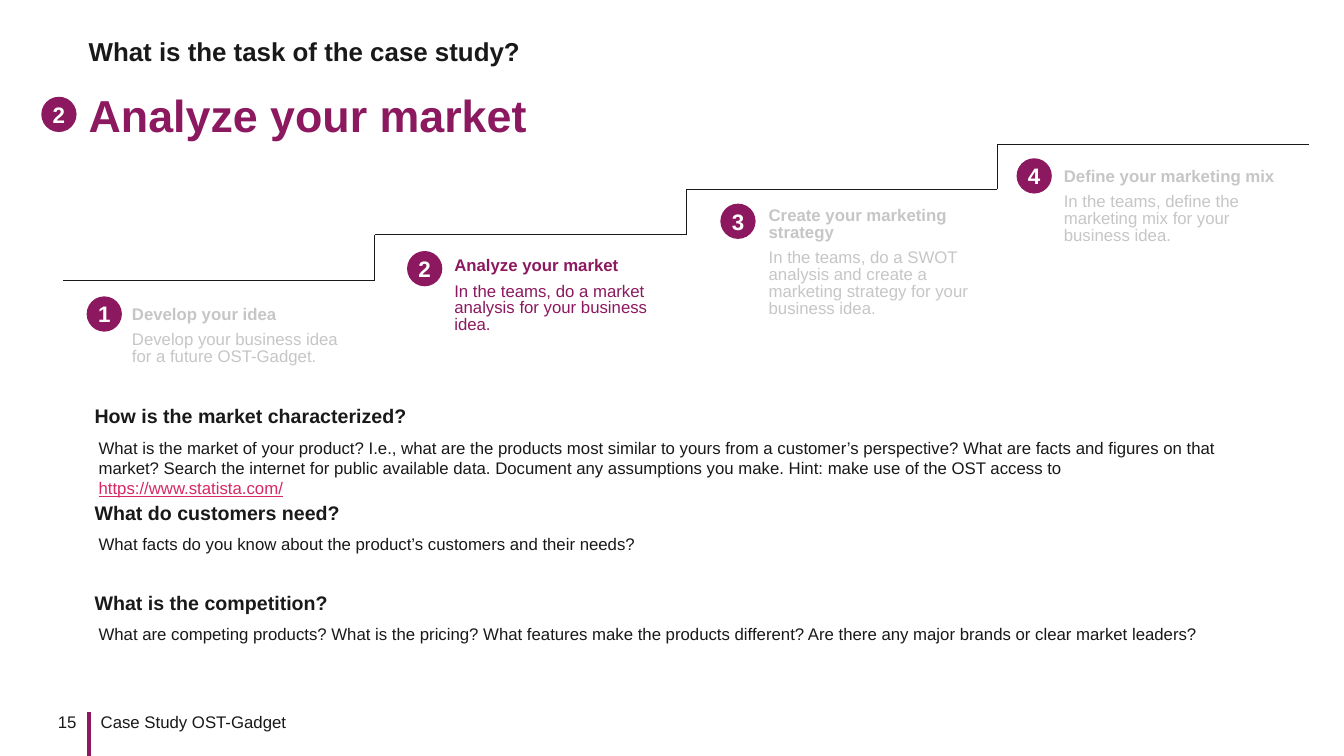
from lxml.etree import SubElement
from pptx import Presentation
from pptx.dml.color import RGBColor
from pptx.enum.shapes import MSO_CONNECTOR, MSO_SHAPE
from pptx.enum.text import MSO_ANCHOR, MSO_AUTO_SIZE, PP_ALIGN
from pptx.oxml.ns import qn
from pptx.util import Inches, Pt

PLUM = RGBColor(0x8C, 0x19, 0x5F)
PINK = RGBColor(0xD7, 0x28, 0x64)
INK = RGBColor(0x19, 0x19, 0x19)
GREY = RGBColor(0xC6, 0xC6, 0xC6)
WHITE = RGBColor(0xFF, 0xFF, 0xFF)

LEFT = 0.88
DISC = 0.35
STAIR_LEFT, STAIR_BASE = 0.63, 2.78
TREAD, RISE = 3.09, 0.45

prs = Presentation()
prs.slide_width, prs.slide_height = Inches(13.34), Inches(7.5)
slide = prs.slides.add_slide(prs.slide_layouts[5])
shapes = slide.shapes


def fill_text(shape, lines, size, color, bold=False, anchor=MSO_ANCHOR.TOP,
              align=PP_ALIGN.LEFT, insets=(0, 0, 0, 0)):
    """Write one paragraph per line into the shape and return its paragraphs."""
    frame = shape.text_frame
    frame.text = "\n".join(lines)
    frame.word_wrap, frame.auto_size = True, MSO_AUTO_SIZE.NONE
    frame.vertical_anchor = anchor
    (frame.margin_left, frame.margin_top,
     frame.margin_right, frame.margin_bottom) = map(Inches, insets)
    for paragraph in frame.paragraphs:
        paragraph.alignment = align
        for run in paragraph.runs:
            run.font.name, run.font.size = "Arial", Pt(size)
            run.font.bold, run.font.color.rgb = bold, color
    return frame.paragraphs


def add_line(start, end, color, width):
    line = shapes.add_connector(MSO_CONNECTOR.STRAIGHT, *map(Inches, start + end))
    line.line.color.rgb, line.line.width = color, Pt(width)
    SubElement(line._element.spPr, qn("a:effectLst"))


# Heading
title = shapes.title
title.left, title.top, title.width, title.height = map(Inches, (LEFT, 0.76, 12.09, 0.75))
fill_text(title, ["Analyze your market"], 32, PLUM, True, MSO_ANCHOR.MIDDLE)
topic = shapes.add_textbox(*map(Inches, (LEFT, 0.37, 12.09, 0.31)))
fill_text(topic, ["What is the task of the case study?"], 18.5, INK, True,
          MSO_ANCHOR.MIDDLE)[0].line_spacing = 0.9

# Footer
add_line((LEFT, 7.06), (LEFT, 7.5), PLUM, 3)
footer = shapes.add_textbox(*map(Inches, (LEFT, 7.06, 5.87, 0.36)))
fill_text(footer, ["Case Study OST-Gadget"], 12, INK, insets=(0.12, 0, 0, 0))
page_number = shapes.add_textbox(*map(Inches, (0.29, 7.06, 0.59, 0.2)))
fill_text(page_number, ["15"], 12, INK, align=PP_ALIGN.RIGHT, insets=(0, 0, 0.12, 0))

# Questions: top, heading, text, link
questions = [
    (3.96, "How is the market characterized?",
     "What is the market of your product? I.e., what are the products most similar "
     "to yours from a customer’s perspective? What are facts and figures on that "
     "market? Search the internet for public available data. Document any assumptions "
     "you make. Hint: make use of the OST access to ", "https://www.statista.com/"),
    (4.92, "What do customers need?",
     "What facts do you know about the product’s customers and their needs?", ""),
    (5.81, "What is the competition?",
     "What are competing products? What is the pricing? What features make the "
     "products different? Are there any major brands or clear market leaders?", ""),
]
for top, heading, details, link in questions:
    question = shapes.add_textbox(*map(Inches, (0.84, top, 11.89, 0.34)))
    fill_text(question, [heading], 14, INK, True, insets=(0.1, 0.05, 0.1, 0.05))
    answer = shapes.add_textbox(
        *map(Inches, (LEFT, top + 0.33, 11.65, 0.71 if link else 0.3)))
    body = fill_text(answer, [details], 12, INK, insets=(0.1, 0.05, 0.1, 0.05))[0]
    if link:
        address = body.add_run()
        address.text = link
        address.font.name, address.font.size = "Arial", Pt(12)
        address.font.underline, address.font.color.rgb = True, PINK

# Staircase
for step in range(4):
    x, y = STAIR_LEFT + step * TREAD, STAIR_BASE - step * RISE
    add_line((x, y), (x + TREAD, y), INK, 0.75)
    if step < 3:
        add_line((x + TREAD, y), (x + TREAD, y - RISE), INK, 0.75)

# Steps: text left and top, heading, task, colour
steps = [
    (1.31, 2.74, "Develop your idea",
     "Develop your business idea for a future OST-Gadget.", GREY),
    (4.51, 2.34, "Analyze your market",
     "In the teams, do a market analysis for your business idea.", PLUM),
    (7.63, 2.01, "Create your marketing strategy",
     "In the teams, do a SWOT analysis and create a marketing strategy for your "
     "business idea.", GREY),
    (10.56, 1.45, "Define your marketing mix",
     "In the teams, define the marketing mix for your business idea.", GREY),
]
for left, top, heading, task, color in steps:
    step_text = shapes.add_textbox(*map(Inches, (left, top, 2.23, 1.2)))
    paragraphs = fill_text(step_text, [heading, task], 12, color,
                           anchor=MSO_ANCHOR.MIDDLE, insets=(0, 0.05, 0, 0.05))
    paragraphs[0].runs[0].font.bold = True
    for paragraph in paragraphs:
        paragraph.line_spacing, paragraph.space_after = Pt(12), Pt(6)

# Numbered discs: number, left, top
discs = [("1", 0.86, 2.94), ("2", 4.04, 2.49), ("3", 7.15, 2.02),
         ("4", 10.09, 1.57), ("2", 0.41, 0.96)]
for number, left, top in discs:
    disc = shapes.add_shape(MSO_SHAPE.OVAL, *map(Inches, (left, top, DISC, DISC)))
    disc.shadow.inherit = False
    disc.fill.solid()
    disc.fill.fore_color.rgb = PLUM
    disc.line.fill.background()
    fill_text(disc, [number], 16, WHITE, True, MSO_ANCHOR.MIDDLE, PP_ALIGN.CENTER)
    disc.text_frame.word_wrap = False

prs.save("out.pptx")
